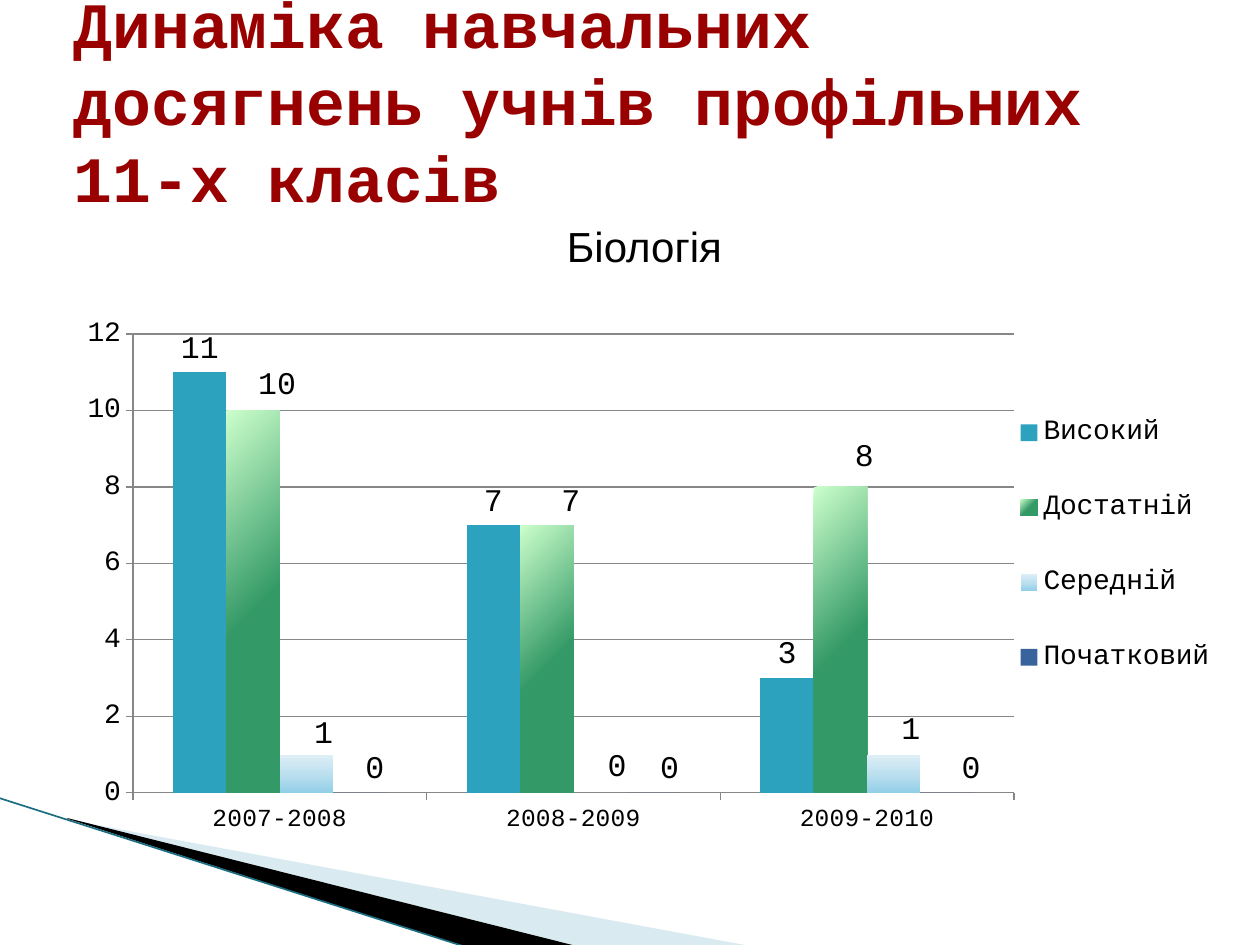
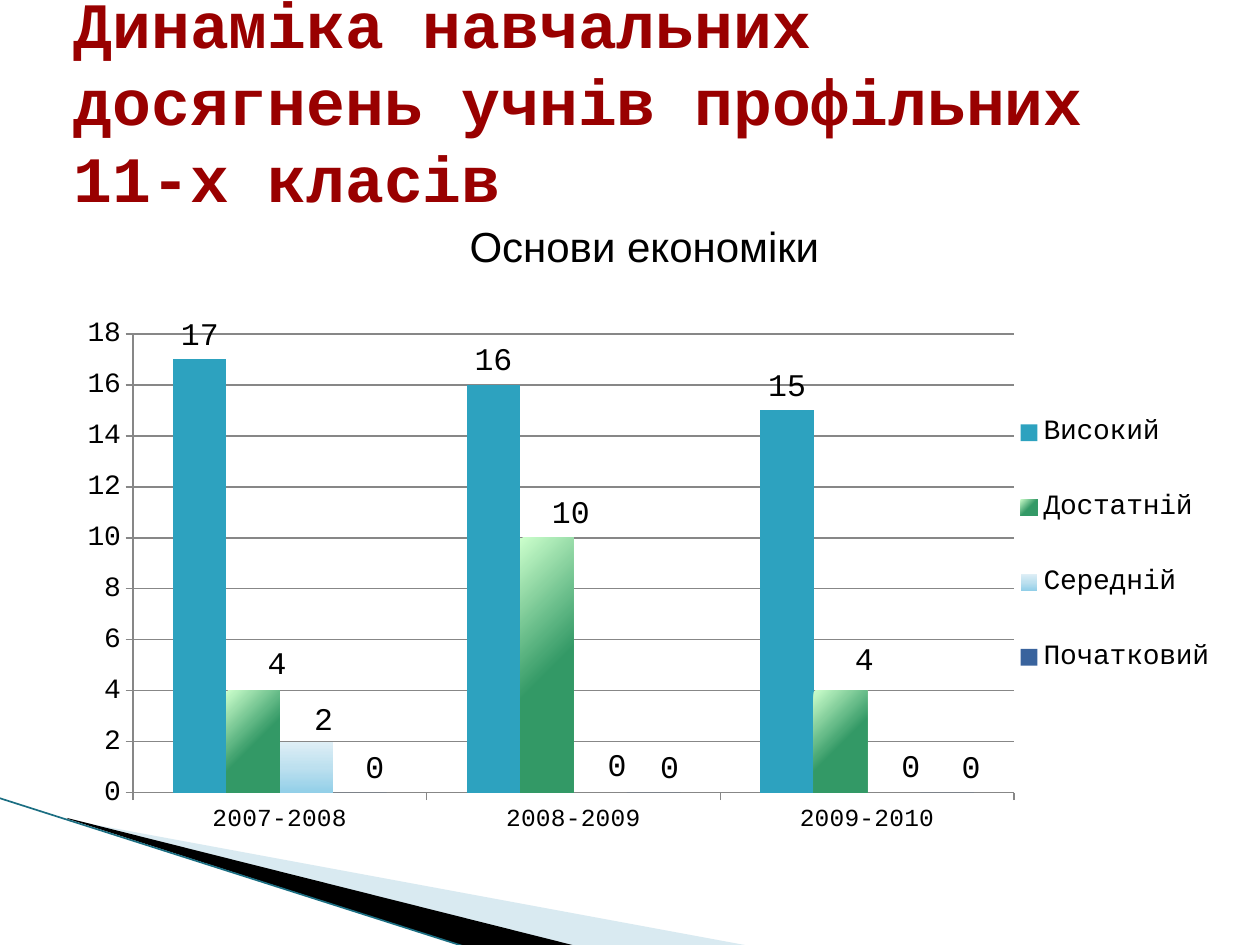
import pptx
import pptx.chart.data
import pptx.dml.color
import pptx.enum.chart
import pptx.enum.shapes
import pptx.enum.text
import pptx.oxml
import pptx.oxml.ns
import pptx.util
from dataclasses import dataclass

# Content
TITLE = "Динаміка навчальних досягнень учнів профільних 11-х класів"
YEARS = ["2007-2008", "2008-2009", "2009-2010"]
LEVELS = ["Високий", "Достатній", "Середній", "Початковий"]
SUBJECTS = [
    {"name": "Біологія", "top": 12,
     "grades": [(11, 7, 3), (10, 7, 8), (1, 0, 1), (0, 0, 0)]},
    {"name": "Основи економіки", "top": 18,
     "grades": [(17, 16, 15), (4, 10, 4), (2, 0, 0), (0, 0, 0)]},
]


@dataclass(frozen=True)
class Theme:
    mono: str = "Courier New"
    sans: str = "Arial"
    title: str = "990000"
    text: str = "000000"
    axis: str = "878787"
    band_light: str = "A0CBDC"
    band_dark: str = "000000"
    band_edge: str = "1B6E82"
    title_size: int = 37
    title_pitch: int = 44
    subject_size: int = 24
    label_size: int = 18
    scale_size: int = 16
    year_size: int = 14


THEME = Theme()
# A level is one colour, or gradient stops with an angle in degrees
LEVEL_FILLS = [
    "2DA2BF",
    ([(0, "CCFFCC"), (53, "339966")], 45),
    ([(0, "92CFE8"), (50, "BDE0EF"), (100, "DFEFF6")], 270),
    "39639D",
]

# Geometry in px
SCALE = 914400 / 126
SLIDE = (1260, 945)
TITLE_BOX = (61, 5, 1134, 189)
SUBJECT_BOX = (347, 214, 595, 63)
CHART_BOX = (44, 210, 1181, 722)
PLOT_BOX = (133, 334, 881, 459)
LEGEND_BOX = (1015, 373, 200, 344)
# The tips of the bands reach beyond their frames
LIGHT_FRAME = (98, 689, 524, 199)
LIGHT_BAND = [(69, 820), (750, 946), (575, 946), (69, 819)]
DARK_FRAME = (-8, 798, 524, 116)
DARK_BAND = [(67, 818), (576, 946), (469, 948), (68, 819)]
EDGE = (-1, 798, 469, 948)
# Shift of each value label from its usual place, by level and year
LABEL_SHIFTS = {
    1: [(24, -2), (24, 0), (24, -6)],
    2: [(17, 3), (17, -2), (17, -1)],
    3: [(15, 0), (16, 0), (24, 0)],
}


def px(*lengths):
    return [pptx.util.Emu(round(length * SCALE)) for length in lengths]


def rgb(code):
    return pptx.dml.color.RGBColor.from_string(code)


def set_font(font, name, size, color, bold=False):
    font.name, font.size, font.bold = name, pptx.util.Pt(size), bold
    font.color.rgb = rgb(color)


def place(shape, box):
    shape.left, shape.top, shape.width, shape.height = px(*box)


def xml(tag, inner, prefix):
    return pptx.oxml.parse_xml(
        f"<{tag} {pptx.oxml.ns.nsdecls(prefix)}>{inner}</{tag}>")


# Bands shared by all slides
def add_band(page, frame, points, color):
    outline = page.shapes.build_freeform(*points[0], scale=SCALE)
    outline.add_line_segments(points[1:], close=True)
    band = outline.convert_to_shape()
    place(band, frame)
    left, top, width, height = frame
    path = band.element.xpath(".//a:path")[0]
    path.set("w", str(width))
    path.set("h", str(height))
    for node, (x, y) in zip(path.xpath(".//a:pt"), points):
        node.set("x", str(x - left))
        node.set("y", str(y - top))
    band.shadow.inherit = False
    band.fill.solid()
    band.fill.fore_color.rgb = rgb(color)
    band.line.fill.background()
    return band


def move_bands_to_layout(page):
    light = add_band(page, LIGHT_FRAME, LIGHT_BAND, THEME.band_light)
    tint = light.element.xpath("./p:spPr/a:solidFill/a:srgbClr")[0]
    tint.append(pptx.oxml.parse_xml(
        f'<a:alpha {pptx.oxml.ns.nsdecls("a")} val="40000"/>'))
    dark = add_band(page, DARK_FRAME, DARK_BAND, THEME.band_dark)
    edge = page.shapes.add_connector(
        pptx.enum.shapes.MSO_CONNECTOR.STRAIGHT, *px(*EDGE))
    edge.line.color.rgb = rgb(THEME.band_edge)
    edge.line.width = pptx.util.Pt(0.95)
    edge.element.spPr.append(xml("a:effectLst", "", "a"))
    tree = page.slide_layout.element.cSld.spTree
    for position, part in enumerate((light, dark, edge), start=2):
        tree.insert(position, part.element)


# Chart parts
def set_layout(parent, index, x, y, size=None, inner=False):
    for old in parent.findall(pptx.oxml.ns.qn("c:layout")):
        parent.remove(old)
    fields = [("layoutTarget", "inner")] if inner else []
    if size:
        fields += [("xMode", "edge"), ("yMode", "edge")]
    fields += [("x", round(x, 4)), ("y", round(y, 4))]
    if size:
        fields += [("w", round(size[0], 4)), ("h", round(size[1], 4))]
    inside = "".join(f'<c:{name} val="{value}"/>' for name, value in fields)
    parent.insert(index, xml(
        "c:layout", f"<c:manualLayout>{inside}</c:manualLayout>", "c"))


def place_in_chart(parent, index, box, inner=False):
    left, top, width, height = CHART_BOX
    set_layout(parent, index, (box[0] - left) / width, (box[1] - top) / height,
               (box[2] / width, box[3] / height), inner)


def fill_level(series, node, fill):
    series.format.line.fill.background()
    series.format.fill.solid()
    if isinstance(fill, str):
        series.format.fill.fore_color.rgb = rgb(fill)
        return
    stops, angle = fill
    inside = "".join(
        f'<a:gs pos="{at * 1000}"><a:srgbClr val="{color}"/></a:gs>'
        for at, color in stops)
    gradient = xml("a:gradFill", f'<a:gsLst>{inside}</a:gsLst>'
                   f'<a:lin ang="{angle * 60000}" scaled="0"/>', "a")
    solid = node.xpath("./c:spPr/a:solidFill")[0]
    solid.getparent().replace(solid, gradient)


def label_level(series, node, shifts):
    outside = pptx.enum.chart.XL_LABEL_POSITION.OUTSIDE_END
    labels = series.data_labels
    labels.show_value = True
    labels.position = outside
    set_font(labels.font, THEME.mono, THEME.label_size, THEME.text)
    for year, (right, down) in enumerate(shifts):
        series.points[year].data_label.position = outside
        label = node.xpath(f"./c:dLbls/c:dLbl[c:idx/@val='{year}']")[0]
        set_layout(label, 1, right / CHART_BOX[2], down / CHART_BOX[3])
    for leader in node.xpath("./c:dLbls/c:showLeaderLines"):
        leader.set("val", "0")


def format_axis(axis, size):
    axis.major_tick_mark = pptx.enum.chart.XL_TICK_MARK.OUTSIDE
    axis.minor_tick_mark = pptx.enum.chart.XL_TICK_MARK.NONE
    axis.format.line.color.rgb = rgb(THEME.axis)
    set_font(axis.tick_labels.font, THEME.mono, size, THEME.text)


def add_grades_chart(page, subject):
    data = pptx.chart.data.CategoryChartData()
    data.categories = YEARS
    for level, grades in zip(LEVELS, subject["grades"]):
        data.add_series(level, grades)
    chart = page.shapes.add_chart(
        pptx.enum.chart.XL_CHART_TYPE.COLUMN_CLUSTERED,
        *px(*CHART_BOX), data).chart
    chart.has_title = False
    set_font(chart.font, THEME.mono, THEME.label_size, THEME.text)

    format_axis(chart.category_axis, THEME.year_size)
    values = chart.value_axis
    format_axis(values, THEME.scale_size)
    values.minimum_scale, values.maximum_scale = 0, subject["top"]
    values.major_unit = 2
    values.has_major_gridlines = True
    values.major_gridlines.format.line.color.rgb = rgb(THEME.axis)

    chart.has_legend = True
    chart.legend.position = pptx.enum.chart.XL_LEGEND_POSITION.RIGHT
    chart.legend.include_in_layout = False
    set_font(chart.legend.font, THEME.mono, THEME.scale_size, THEME.text)

    plot = chart.plots[0]
    plot.gap_width, plot.overlap = 150, 0
    plot.vary_by_categories = False
    nodes = chart.element.xpath(".//c:ser")
    for level, (series, node) in enumerate(zip(plot.series, nodes)):
        fill_level(series, node, LEVEL_FILLS[level])
        label_level(series, node, LABEL_SHIFTS.get(level, []))
    place_in_chart(chart.element.xpath(".//c:plotArea")[0], 0, PLOT_BOX, True)
    place_in_chart(chart.element.xpath(".//c:legend")[0], 1, LEGEND_BOX)


# Text parts
def write_title(page):
    title = page.shapes.title
    place(title, TITLE_BOX)
    frame = title.text_frame
    frame.text = TITLE
    frame.word_wrap = True
    frame.auto_size = pptx.enum.text.MSO_AUTO_SIZE.NONE
    frame.vertical_anchor = pptx.enum.text.MSO_ANCHOR.MIDDLE
    para = frame.paragraphs[0]
    para.alignment = pptx.enum.text.PP_ALIGN.LEFT
    para.line_spacing = pptx.util.Pt(THEME.title_pitch)
    set_font(para.font, THEME.mono, THEME.title_size, THEME.title, bold=True)


def add_subject(page, name):
    frame = page.shapes.add_textbox(*px(*SUBJECT_BOX)).text_frame
    frame.word_wrap = True
    frame.text = name
    para = frame.paragraphs[0]
    para.alignment = pptx.enum.text.PP_ALIGN.CENTER
    set_font(para.font, THEME.sans, THEME.subject_size, THEME.text)


def main():
    deck = pptx.Presentation()
    deck.slide_width, deck.slide_height = px(*SLIDE)
    title_only = deck.slide_layouts[5]
    for number, subject in enumerate(SUBJECTS):
        page = deck.slides.add_slide(title_only)
        if number == 0:
            move_bands_to_layout(page)
        write_title(page)
        add_grades_chart(page, subject)
        add_subject(page, subject["name"])
    deck.save("out.pptx")


if __name__ == "__main__":
    main()
